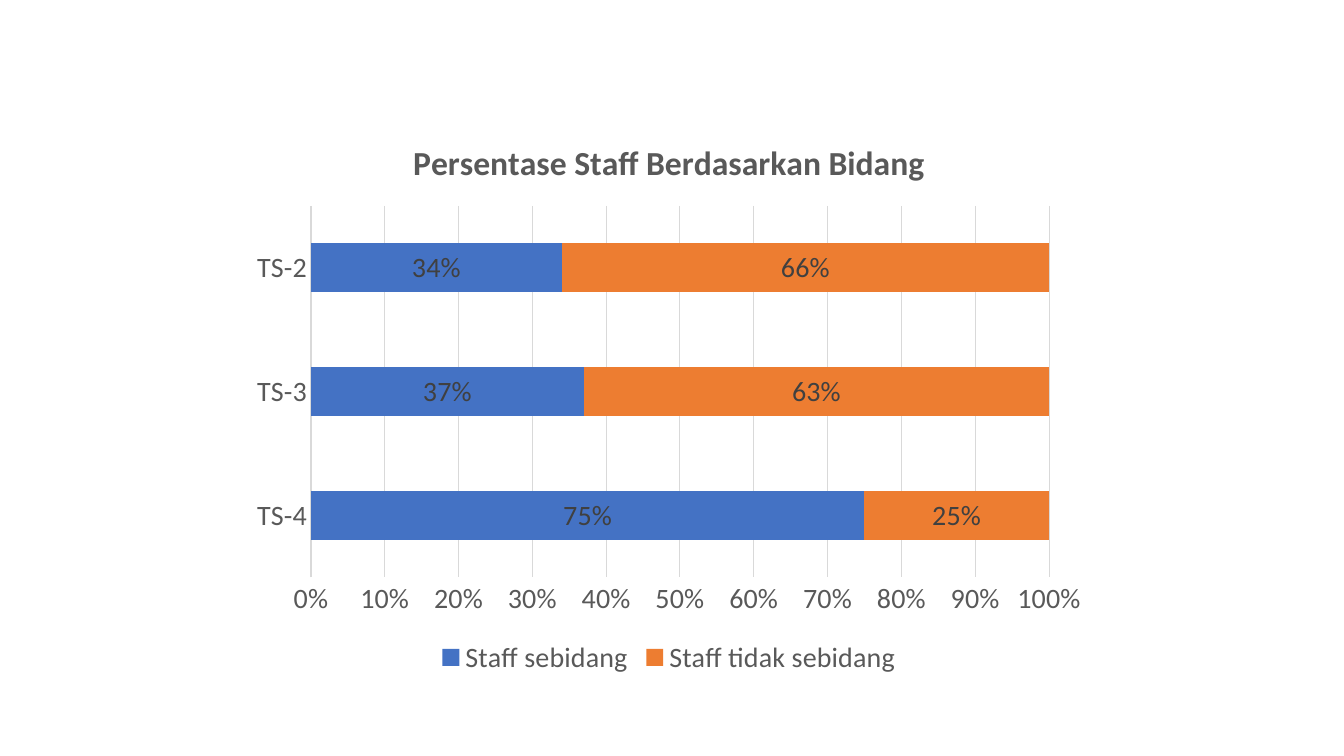
from pptx import Presentation
from pptx.chart.data import CategoryChartData
from pptx.dml.color import RGBColor
from pptx.enum.chart import XL_CHART_TYPE, XL_LABEL_POSITION, XL_LEGEND_POSITION, XL_TICK_MARK
from pptx.util import Inches, Pt

# Content
TITLE = "Persentase Staff Berdasarkan Bidang"
CATEGORIES = ["TS-4", "TS-3", "TS-2"]
BLUE = RGBColor(0x44, 0x72, 0xC4)
ORANGE = RGBColor(0xED, 0x7D, 0x31)
SERIES = [
    ("Staff sebidang", [0.75, 0.37, 0.34], BLUE),
    ("Staff tidak sebidang", [0.25, 0.63, 0.66], ORANGE),
]

# Style
GREY = RGBColor(0x59, 0x59, 0x59)
DARK_GREY = RGBColor(0x40, 0x40, 0x40)
LIGHT_GREY = RGBColor(0xD9, 0xD9, 0xD9)
PERCENT = "0%"


def style_font(font, size=20, color=GREY, bold=False):
    font.name = "Calibri"
    font.size = Pt(size)
    font.bold = bold
    font.color.rgb = color


def write_text(frame, text, **style):
    span = frame.paragraphs[0].add_run()
    span.text = text
    style_font(span.font, **style)


def style_line(line):
    line.color.rgb = LIGHT_GREY
    line.width = Pt(0.75)


def add_staff_chart(page):
    data = CategoryChartData(number_format=PERCENT)
    data.categories = CATEGORIES
    for name, values, _ in SERIES:
        data.add_series(name, values)
    chart = page.shapes.add_chart(
        XL_CHART_TYPE.BAR_STACKED_100,
        Inches(2.38), Inches(1.16), Inches(8.51), Inches(5.59), data,
    ).chart
    style_font(chart.font)

    # Title and legend
    chart.has_title = True
    write_text(chart.chart_title.text_frame, TITLE, size=24, bold=True)
    chart.chart_title.include_in_layout = False
    chart.has_legend = True
    chart.legend.position = XL_LEGEND_POSITION.BOTTOM
    chart.legend.include_in_layout = False
    style_font(chart.legend.font)

    # Axes
    for axis in (chart.category_axis, chart.value_axis):
        axis.major_tick_mark = XL_TICK_MARK.NONE
        axis.minor_tick_mark = XL_TICK_MARK.NONE
        style_font(axis.tick_labels.font)
    style_line(chart.category_axis.format.line)
    value_axis = chart.value_axis
    value_axis.format.line.fill.background()
    value_axis.has_major_gridlines = True
    style_line(value_axis.major_gridlines.format.line)
    value_axis.tick_labels.number_format = PERCENT
    value_axis.tick_labels.number_format_is_linked = False

    # Bars and their labels
    plot = chart.plots[0]
    plot.vary_by_categories = False
    plot.gap_width = 150
    plot.overlap = 100
    for series, (_, _, color) in zip(plot.series, SERIES):
        series.format.fill.solid()
        series.format.fill.fore_color.rgb = color
        labels = series.data_labels
        labels.show_value = True
        labels.position = XL_LABEL_POSITION.CENTER
        labels.number_format = PERCENT
        labels.number_format_is_linked = False
        style_font(labels.font, color=DARK_GREY)


def main():
    deck = Presentation()
    deck.slide_width = Inches(13.33)
    deck.slide_height = Inches(7.5)
    page = deck.slides.add_slide(deck.slide_layouts[6])
    add_staff_chart(page)
    deck.save("out.pptx")


if __name__ == "__main__":
    main()
